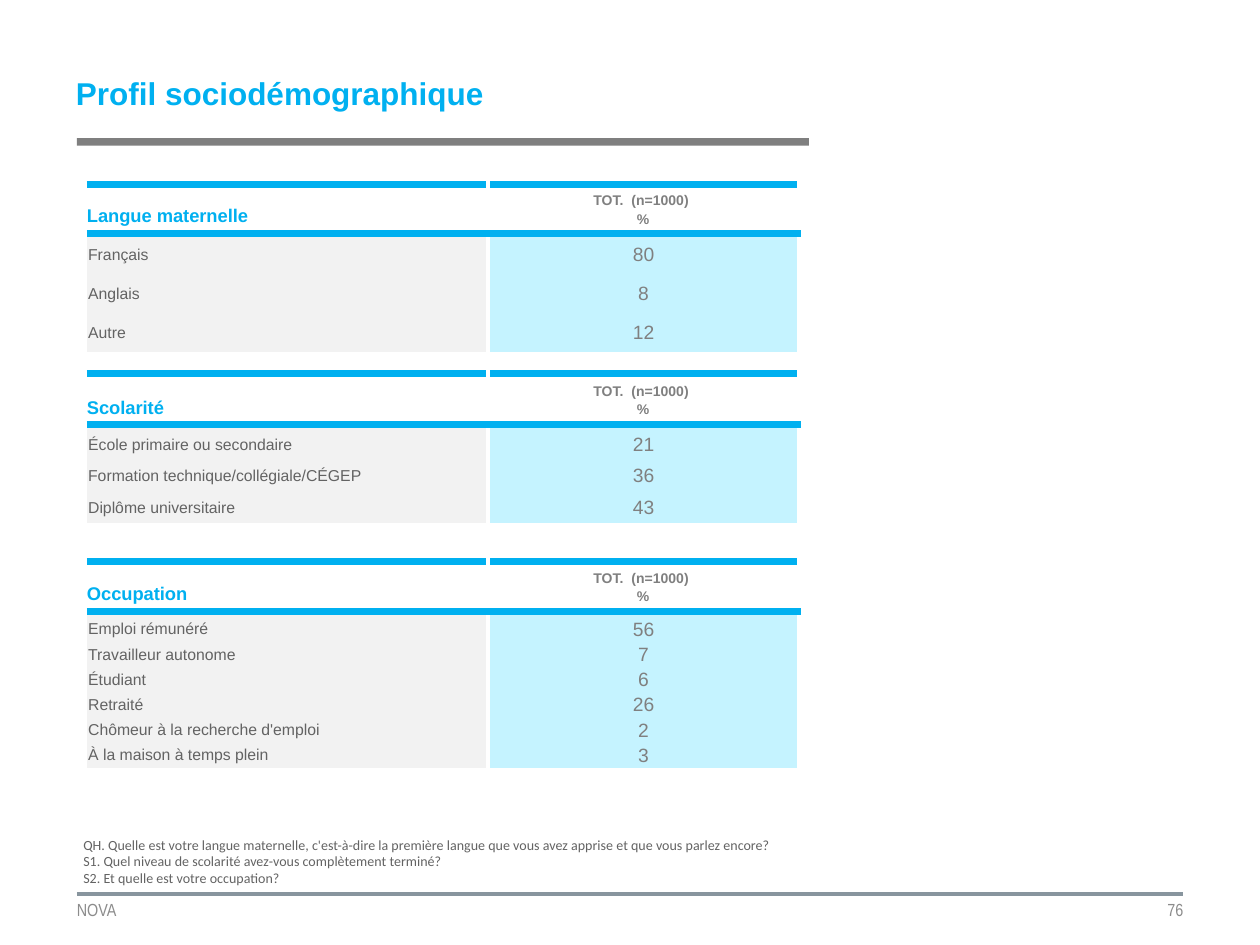
from lxml import etree
from pptx import Presentation
from pptx.dml.color import RGBColor
from pptx.enum.shapes import MSO_CONNECTOR, MSO_SHAPE
from pptx.enum.text import MSO_ANCHOR, MSO_AUTO_SIZE, PP_ALIGN
from pptx.oxml.ns import qn
from pptx.util import Pt

STRAIGHT = MSO_CONNECTOR.STRAIGHT
RECTANGLE = MSO_SHAPE.RECTANGLE
TOP, MIDDLE, BOTTOM = MSO_ANCHOR.TOP, MSO_ANCHOR.MIDDLE, MSO_ANCHOR.BOTTOM
LEFT, CENTER, RIGHT = PP_ALIGN.LEFT, PP_ALIGN.CENTER, PP_ALIGN.RIGHT
GROW = MSO_AUTO_SIZE.SHAPE_TO_FIT_TEXT

BLUE = RGBColor(0x00, 0xB0, 0xF0)
PALE_BLUE = RGBColor(0xC5, 0xF3, 0xFF)
PALE_GREY = RGBColor(0xF2, 0xF2, 0xF2)
BAR_GREY = RGBColor(0x7F, 0x7F, 0x7F)
VALUE_GREY = RGBColor(0x80, 0x80, 0x80)
LABEL_GREY = RGBColor(0x63, 0x63, 0x63)
FOOTER_GREY = RGBColor(0x8C, 0x8C, 0x8C)
RULE_GREY = RGBColor(0x88, 0x95, 0x9E)
WHITE = RGBColor(0xFF, 0xFF, 0xFF)

NO_STYLE = "{2D5ABB26-0587-4C30-8999-92F81FD0307C}"
TABLE_LEFT = 49.7
COLUMN_WIDTHS = (229.2, 177.8)
GAP = (WHITE, 3)
RULE = (BLUE, 4.5)

PROFILES = [
    ("Langue maternelle", 105.5, 27.7, 1, 22.2,
     [("Français", 80), ("Anglais", 8), ("Autre", 12)]),
    ("Scolarité", 213.4, 29.4, 2, 18,
     [("École primaire ou secondaire", 21),
      ("Formation technique/collégiale/CÉGEP", 36),
      ("Diplôme universitaire", 43)]),
    ("Occupation", 320.9, 28.3, 3, 14.4,
     [("Emploi rémunéré", 56), ("Travailleur autonome", 7), ("Étudiant", 6),
      ("Retraité", 26), ("Chômeur à la recherche d'emploi", 2),
      ("À la maison à temps plein", 3)]),
]
QUESTIONS = [
    "QH. Quelle est votre langue maternelle, c'est-à-dire la première langue "
    "que vous avez apprise et que vous parlez encore?",
    "S1. Quel niveau de scolarité avez-vous complètement terminé?",
    "S2. Et quelle est votre occupation?",
]


def write(tf, lines, size, color, font="Arial", bold=False, align=LEFT, spacing=None):
    """Fill a text frame with equally formatted paragraphs."""
    for i, line in enumerate(lines):
        p = tf.add_paragraph() if i else tf.paragraphs[0]
        p.text = line
        p.alignment = align
        p.line_spacing = spacing
        p.font.name, p.font.size, p.font.bold = font, Pt(size), bold
        p.font.color.rgb = color


def add_text(slide, box, lines, size, color, margins=(0, 0), anchor=MIDDLE, **style):
    """Add a wrapping text box with horizontal and vertical margins."""
    sp = slide.shapes.add_textbox(*map(Pt, box))
    tf = sp.text_frame
    tf.word_wrap = True
    tf.vertical_anchor = anchor
    tf.margin_left = tf.margin_right = Pt(margins[0])
    tf.margin_top = tf.margin_bottom = Pt(margins[1])
    write(tf, lines, size, color, **style)
    return sp


def add_title(slide, box):
    """Place the heading and the grey bar below it."""
    x, y, w, h = box
    add_text(slide, (x, y, w, 43.2), ["Profil sociodémographique"], 18, BLUE, bold=True)
    bar = slide.shapes.add_shape(RECTANGLE, Pt(x + 0.5), Pt(y + h - 4.3), Pt(w), Pt(4.3))
    bar.shadow.inherit = False
    bar.fill.solid()
    bar.fill.fore_color.rgb = BAR_GREY
    bar.line.fill.background()


def set_borders(cell, **borders):
    """Draw the borders given as side=(color, width) and clear the other sides."""
    tc_pr = cell._tc.get_or_add_tcPr()
    for side in "LRTB":
        color, width = borders.get(side, (None, 0))
        ln = etree.SubElement(tc_pr, qn(f"a:ln{side}"), w=str(Pt(width)))
        if color is None:
            etree.SubElement(ln, qn("a:noFill"))
        else:
            fill = etree.SubElement(ln, qn("a:solidFill"))
            etree.SubElement(fill, qn("a:srgbClr"), val=str(color))


def format_cell(cell, margins, anchor, fill=None, **borders):
    """Set margins, anchor, borders and fill of a cell."""
    cell.margin_left, cell.margin_top, cell.margin_right, cell.margin_bottom = map(Pt, margins)
    cell.vertical_anchor = anchor
    set_borders(cell, **borders)
    if fill is None:
        cell.fill.background()
    else:
        cell.fill.solid()
        cell.fill.fore_color.rgb = fill


def add_profile(slide, box, title, heights, rows):
    """Place one profile table with header, thin spacer row and values."""
    table = slide.shapes.add_table(len(heights), 2, *map(Pt, box)).table
    table.first_row = table.horz_banding = False
    table._tbl.tblPr.find(qn("a:tableStyleId")).text = NO_STYLE
    for column, width in zip(table.columns, COLUMN_WIDTHS):
        column.width = Pt(width)
    for row, height in zip(table.rows, heights):
        row.height = Pt(height)

    label_sides, value_sides = {"R": GAP}, {"L": GAP, "R": GAP}
    name, total = table.cell(0, 0), table.cell(0, 1)
    format_cell(name, (0, 3.6, 0, 3.6), BOTTOM, T=RULE, B=RULE, **label_sides)
    write(name.text_frame, [title], 10.5, BLUE, bold=True, spacing=0.95)
    format_cell(total, (0, 0, 2.8, 0), MIDDLE, T=RULE, B=RULE, **value_sides)
    write(total.text_frame, ["TOT.  (n=1000)", " %"], 8, BAR_GREY,
          bold=True, align=CENTER, spacing=1.15)

    columns = ((PALE_GREY, label_sides), (PALE_BLUE, value_sides))
    for column, (fill, sides) in enumerate(columns):
        spacer = table.cell(1, column)
        format_cell(spacer, (0, 0, 0, 0), TOP, fill, T=RULE, **sides)
        p = spacer.text_frame.paragraphs[0]
        etree.SubElement(p._p, qn("a:endParaRPr"), sz="100")

    for i, (label, value) in enumerate(rows, start=2):
        left, right = table.cell(i, 0), table.cell(i, 1)
        format_cell(left, (0.7, 0.7, 0.7, 0), MIDDLE, PALE_GREY, **label_sides)
        write(left.text_frame, [label], 9, LABEL_GREY)
        format_cell(right, (0.7, 0.7, 0.7, 0), MIDDLE, PALE_BLUE, **value_sides)
        write(right.text_frame, [str(value)], 11, VALUE_GREY, align=CENTER)


def add_questions(slide, box):
    """Place the survey questions above the footer."""
    sp = add_text(slide, box, QUESTIONS, 8, LABEL_GREY, margins=(7.2, 3.6),
                  anchor=TOP, font="Calibri")
    sp.text_frame.auto_size = GROW


def add_footer(slide, box):
    """Place the double footer rule, the firm name and the page number."""
    x, y, w, h = box
    for rule_y in (y, y + 0.7):
        rule = slide.shapes.add_connector(STRAIGHT, Pt(x), Pt(rule_y), Pt(x + w), Pt(rule_y))
        rule.line.color.rgb = RULE_GREY
        rule.line.width = Pt(1.5)
        etree.SubElement(rule._element.spPr, qn("a:effectLst"))
    half = w / 2
    for left, text, align in ((x, "NOVA", LEFT), (x + half, "76", RIGHT)):
        add_text(slide, (left, y, half, h), [text], 10, FOOTER_GREY,
                 font="Arial Narrow", align=align)


def main():
    """Build and save the slide."""
    prs = Presentation()
    prs.slide_width, prs.slide_height = Pt(720), Pt(540)
    slide = prs.slides.add_slide(prs.slide_layouts[6])
    add_footer(slide, (43.9, 510.5, 632.2, 18.7))
    add_title(slide, (43.4, 31.7, 418.3, 51.6))
    for title, top, header, spacer, row_height, rows in PROFILES:
        heights = [header, spacer] + [row_height] * len(rows)
        box = (TABLE_LEFT, top, sum(COLUMN_WIDTHS), sum(heights))
        add_profile(slide, box, title, heights, rows)
    add_questions(slide, (40.5, 474.3, 627, 65.5))
    prs.save("out.pptx")


if __name__ == "__main__":
    main()
